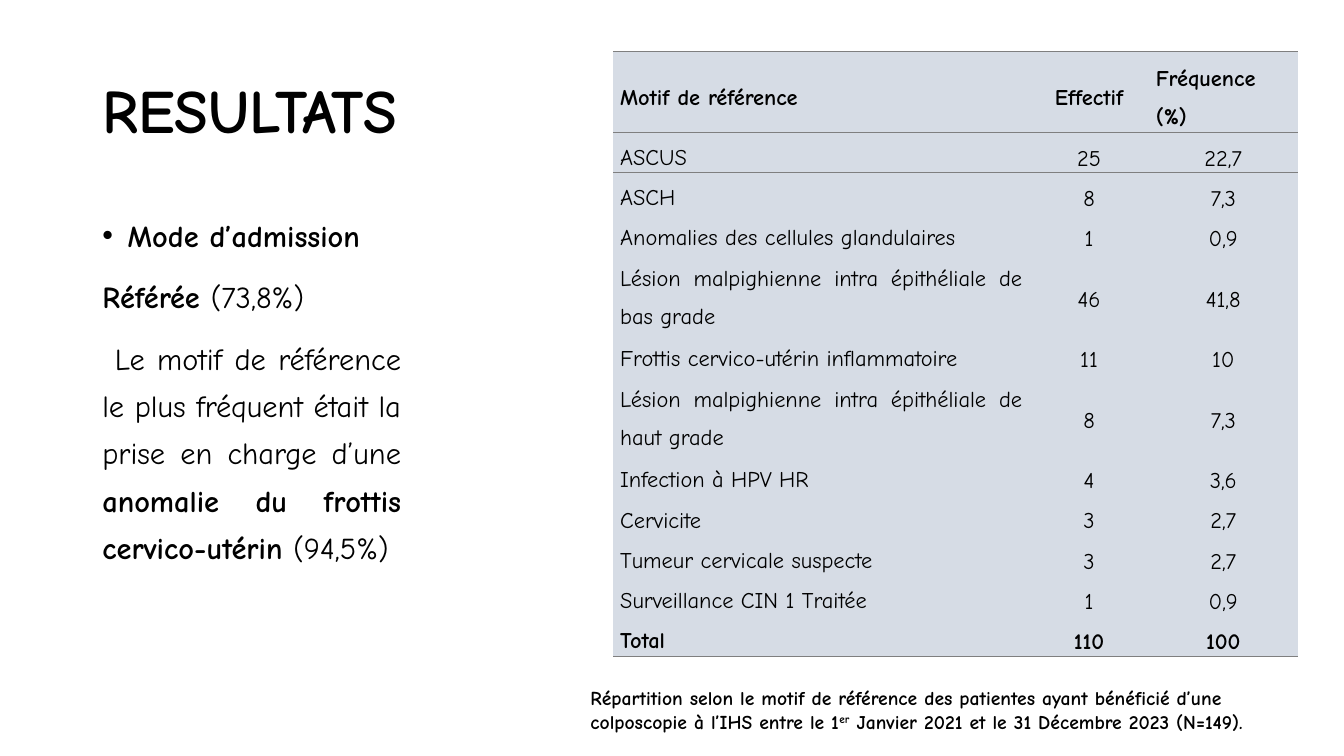
from lxml import etree
from pptx import Presentation
from pptx.dml.color import RGBColor
from pptx.enum.text import MSO_ANCHOR, MSO_AUTO_SIZE, PP_ALIGN
from pptx.oxml.ns import qn
from pptx.util import Cm, Pt

BLACK = RGBColor(0x00, 0x00, 0x00)
BLUE_GREY = RGBColor(0xD6, 0xDC, 0xE5)
RULE_GREY = RGBColor(0x7F, 0x7F, 0x7F)
FONT = "Comic Neue"
LEFT, CENTER, JUSTIFY = PP_ALIGN.LEFT, PP_ALIGN.CENTER, PP_ALIGN.JUSTIFY
MIDDLE, TOP = MSO_ANCHOR.MIDDLE, MSO_ANCHOR.TOP
NO_AUTOFIT = MSO_AUTO_SIZE.NONE
PLAIN_TABLE_STYLE = "{2D5ABB26-0587-4C30-8999-92F81FD0307C}"

ADMISSION = [
    [("Mode d’admission", True)],
    [("Référée ", True), ("(73,8%)", False)],
    [
        (" Le motif de référence le plus fréquent était la prise en charge d’une ", False),
        ("anomalie du frottis cervico-utérin ", True),
        ("(94,5%)", False),
    ],
]
REFERRALS = [
    ("Motif de référence", "Effectif", "Fréquence (%)"),
    ("ASCUS", "25", "22,7"),
    ("ASCH", "8", "7,3"),
    ("Anomalies des cellules glandulaires", "1", "0,9"),
    ("Lésion malpighienne intra épithéliale de bas grade", "46", "41,8"),
    ("Frottis cervico-utérin inflammatoire", "11", "10"),
    ("Lésion malpighienne intra épithéliale de haut grade", "8", "7,3"),
    ("Infection à HPV HR", "4", "3,6"),
    ("Cervicite", "3", "2,7"),
    ("Tumeur cervicale suspecte", "3", "2,7"),
    ("Surveillance CIN 1 Traitée", "1", "0,9"),
    ("Total", "110", "100"),
]


def add_text(paragraph, text, size=16, bold=False, align=None, spacing=None, superscript=False):
    """Append a formatted run to a paragraph and set the paragraph's layout."""
    run = paragraph.add_run()
    run.text = text
    run.font.name = FONT
    run.font.size = Pt(size)
    run.font.bold = bold
    run.font.color.rgb = BLACK
    if superscript:
        run._r.get_or_add_rPr().set("baseline", "30000")
    if align is not None:
        paragraph.alignment = align
    if spacing is not None:
        paragraph.line_spacing = spacing


def add_bullet(paragraph, indent):
    """Give a paragraph a round bullet with a hanging indent."""
    properties = paragraph._p.get_or_add_pPr()
    properties.set("marL", str(indent))
    properties.set("indent", str(-indent))
    etree.SubElement(properties, qn("a:buFont"), typeface="Arial")
    etree.SubElement(properties, qn("a:buChar"), char="•")


def add_rule(cell, side):
    """Draw a grey one-point border on one side of a cell."""
    line = etree.Element(qn(f"a:ln{side}"), w=str(Pt(1)))
    fill = etree.SubElement(line, qn("a:solidFill"))
    etree.SubElement(fill, qn("a:srgbClr"), val=str(RULE_GREY))
    properties = cell._tc.get_or_add_tcPr()
    properties.insert(len(properties.findall(qn("a:lnT"))), line)


def place_title(slide, left, top, width, height):
    """Move and format the slide title."""
    title = slide.shapes.title
    title.left, title.top, title.width, title.height = left, top, width, height
    frame = title.text_frame
    frame.auto_size = NO_AUTOFIT
    frame.vertical_anchor = MIDDLE
    add_text(frame.paragraphs[0], "RESULTATS", size=44, bold=True, align=LEFT, spacing=0.9)


def place_admission(slide, left, top, width, height):
    """Add the admission findings as justified paragraphs."""
    frame = slide.shapes.add_textbox(left, top, width, height).text_frame
    frame.word_wrap = True
    for index, runs in enumerate(ADMISSION):
        paragraph = frame.add_paragraph() if index else frame.paragraphs[0]
        paragraph.space_before = Pt(10)
        for text, bold in runs:
            add_text(paragraph, text, size=21.7, bold=bold, align=JUSTIFY, spacing=1.3)
    add_bullet(frame.paragraphs[0], Cm(0.64))


def place_referrals(slide, left, top, width, height):
    """Add the table of referral reasons, with rules around header and total."""
    last = len(REFERRALS) - 1
    frame = slide.shapes.add_table(len(REFERRALS), 3, left, top, width, height)
    table = frame.table
    table.first_row = table.horz_banding = False
    table._tbl.tblPr.find(qn("a:tableStyleId")).text = PLAIN_TABLE_STYLE
    for column, share in zip(table.columns, (0.608, 0.174, 0.218)):
        column.width = int(width * share)
    for row_index, values in enumerate(REFERRALS):
        table.rows[row_index].height = Cm(0.82)
        for column_index, text in enumerate(values):
            cell = table.cell(row_index, column_index)
            cell.margin_left = cell.margin_right = Cm(0.18)
            cell.margin_top = cell.margin_bottom = 0
            header = row_index == 0
            cell.vertical_anchor = MIDDLE if header or column_index else TOP
            cell.fill.solid()
            cell.fill.fore_color.rgb = BLUE_GREY
            justified = column_index == 0 or (header and column_index == 2)
            add_text(cell.text_frame.paragraphs[0], text, bold=row_index in (0, last),
                     align=JUSTIFY if justified else CENTER, spacing=1.5)
            if row_index in (0, 1):
                add_rule(cell, "T")
            if row_index in (0, last):
                add_rule(cell, "B")


def place_caption(slide, left, top, width, height):
    """Add the table caption."""
    frame = slide.shapes.add_textbox(left, top, width, height).text_frame
    frame.word_wrap = True
    paragraph = frame.paragraphs[0]
    add_text(paragraph, "Répartition selon le motif de référence des patientes ayant bénéficié "
             "d’une colposcopie à l’IHS entre le 1", size=14, bold=True)
    add_text(paragraph, "er", size=14, bold=True, superscript=True)
    add_text(paragraph, " Janvier 2021 et le 31 Décembre 2023 (N=149).", size=14, bold=True)


def main():
    """Build and save the results slide."""
    presentation = Presentation()
    presentation.slide_width, presentation.slide_height = Cm(33.87), Cm(19.05)
    slide = presentation.slides.add_slide(presentation.slide_layouts[5])
    place_title(slide, Cm(2.33), Cm(1.01), Cm(29.21), Cm(3.68))
    place_admission(slide, Cm(2.33), Cm(5.07), Cm(8.03), Cm(12.09))
    place_referrals(slide, Cm(15.45), Cm(1.3), Cm(17.26), Cm(9.84))
    place_caption(slide, Cm(14.63), Cm(17.17), Cm(18.08), Cm(2.06))
    presentation.save("out.pptx")


if __name__ == "__main__":
    main()
